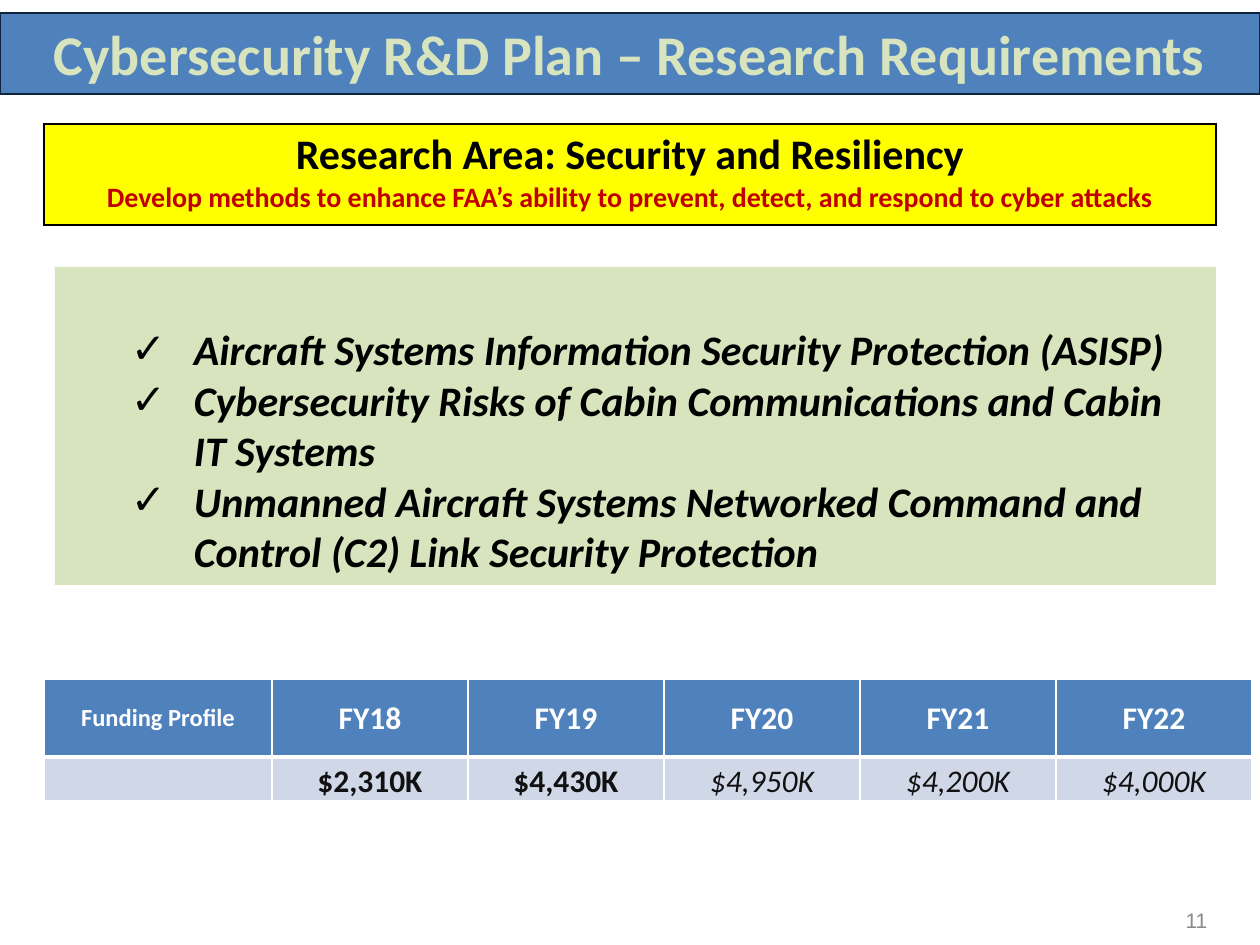
import pptx
import pptx.util
import pptx.dml.color
import pptx.enum.shapes
import pptx.enum.text
import pptx.oxml.ns
from lxml import etree

PX = 914400 / 126
ANCHOR = pptx.enum.text.MSO_ANCHOR
ALIGN = pptx.enum.text.PP_ALIGN
COLORS = {
    "blue": "4F81BD", "navy": "0F243E", "green": "D7E4BD", "yellow": "FFFF00",
    "red": "C00000", "black": "000000", "white": "FFFFFF", "pale": "D0D8E8",
    "ink": "111111", "gray": "898989",
}
TOPICS = [
    "Aircraft Systems Information Security Protection (ASISP)",
    "Cybersecurity Risks of Cabin Communications and Cabin IT Systems",
    "Unmanned Aircraft Systems Networked Command and Control (C2) Link Security Protection",
]
FUNDING = {"FY18": "$2,310K", "FY19": "$4,430K", "FY20": "$4,950K",
           "FY21": "$4,200K", "FY22": "$4,000K"}
FIRM_YEARS = ("FY18", "FY19")


def px(n):
    return pptx.util.Emu(round(n * PX))


def rgb(name):
    return pptx.dml.color.RGBColor.from_string(COLORS[name])


def sub(parent, tag, **attrs):
    return etree.SubElement(parent, pptx.oxml.ns.qn(tag), attrs)


def set_insets(frame, left, top, right, bottom):
    """Set the margins of a text frame or a table cell."""
    frame.margin_left, frame.margin_top = px(left), px(top)
    frame.margin_right, frame.margin_bottom = px(right), px(bottom)


def add_text(tf, text, size=18, color="black", bold=True, italic=False,
             font="Calibri", align=ALIGN.CENTER, spacing=None):
    """Fill the first paragraph if it is empty, otherwise append one."""
    p = tf.paragraphs[0]
    if p.runs:
        p = tf.add_paragraph()
    p.alignment = align
    if spacing:
        p.line_spacing = spacing
    r = p.add_run()
    r.text = text
    r.font.size = pptx.util.Pt(size)
    r.font.name = font
    r.font.bold, r.font.italic = bold, italic
    r.font.color.rgb = rgb(color)
    return p


def add_check(p, indent):
    pPr = p._p.get_or_add_pPr()
    pPr.set("marL", str(px(indent * 2)))
    pPr.set("indent", str(-px(indent)))
    sub(pPr, "a:buFont", typeface="Arial")
    sub(pPr, "a:buChar", char="✓")


def add_box(s, x, y, w, h, fill, line=None, anchor=ANCHOR.MIDDLE):
    sp = s.shapes.add_shape(pptx.enum.shapes.MSO_SHAPE.RECTANGLE,
                            px(x), px(y), px(w), px(h))
    sp.shadow.inherit = False
    sp.fill.solid()
    sp.fill.fore_color.rgb = rgb(fill)
    if line:
        sp.line.color.rgb = rgb(line)
        sp.line.width = pptx.util.Pt(0.75)
    else:
        sp.line.fill.background()
    sp.text_frame.word_wrap = True
    sp.text_frame.vertical_anchor = anchor
    return sp.text_frame


def add_table(s, x, y, widths, heights):
    table = s.shapes.add_table(len(heights), len(widths), px(x), px(y),
                               px(sum(widths)), px(sum(heights))).table
    for col, w in zip(table.columns, widths):
        col.width = px(w)
    for row, h in zip(table.rows, heights):
        row.height = px(h)
    return table


def style_cell(cell, fill, border, insets, anchor=ANCHOR.TOP, **widths):
    """Set fill, insets and borders; widths holds sides that are not 1 pt."""
    set_insets(cell, *insets)
    cell.vertical_anchor = anchor
    tcPr = cell._tc.get_or_add_tcPr()
    for side in "LRTB":
        width = pptx.util.Pt(widths.get(side, 1))
        ln = sub(tcPr, "a:ln" + side, w=str(width))
        sub(sub(ln, "a:solidFill"), "a:srgbClr", val=COLORS[border])
    cell.fill.solid()
    cell.fill.fore_color.rgb = rgb(fill)


def add_research_area(s):
    cell = add_table(s, 44, 124, [1172], [101]).cell(0, 0)
    style_cell(cell, "yellow", "black", (13, 6, 13, 6))
    add_text(cell.text_frame, "Research Area: Security and Resiliency", size=24)
    add_text(cell.text_frame, "Develop methods to enhance FAA’s ability to prevent, "
             "detect, and respond to cyber attacks", size=16, color="red")


def add_topics(s):
    tf = add_box(s, 55, 267, 1161, 318, "green", anchor=ANCHOR.BOTTOM)
    set_insets(tf, 13, 6, 13, 9)
    for topic in TOPICS:
        p = add_text(tf, topic, size=24, italic=True, align=ALIGN.LEFT)
        add_check(p, 63)


def add_funding(s):
    table = add_table(s, 44, 679, [228] + [196] * len(FUNDING), [78, 43])
    for c, year in enumerate(["Funding Profile", *FUNDING]):
        head, body = table.cell(0, c), table.cell(1, c)
        style_cell(head, "blue", "white", (1, 1, 1, 0), ANCHOR.MIDDLE, B=3)
        style_cell(body, "pale", "white", (9, 0, 9, 0), T=3)
        add_text(head.text_frame, year, size=18 if c else 14, color="white")
        if c:
            firm = year in FIRM_YEARS
            add_text(body.text_frame, FUNDING[year], color="ink",
                     bold=firm, italic=not firm, spacing=1.15)


def add_page_number(s):
    tf = s.shapes.add_textbox(px(1123), px(895), px(147), px(50)).text_frame
    tf.word_wrap = True
    tf.vertical_anchor = ANCHOR.MIDDLE
    add_text(tf, "11", size=12, color="gray", bold=False, font="Arial")


def main():
    prs = pptx.Presentation()
    prs.slide_width, prs.slide_height = px(1260), px(945)
    s = prs.slides.add_slide(prs.slide_layouts[6])
    add_page_number(s)
    title = add_box(s, 0, 13, 1260, 81, "blue", line="navy")
    add_text(title, "Cybersecurity R&D Plan – Research Requirements",
             size=32, color="green")
    add_research_area(s)
    add_funding(s)
    add_topics(s)
    prs.save("out.pptx")


if __name__ == "__main__":
    main()
